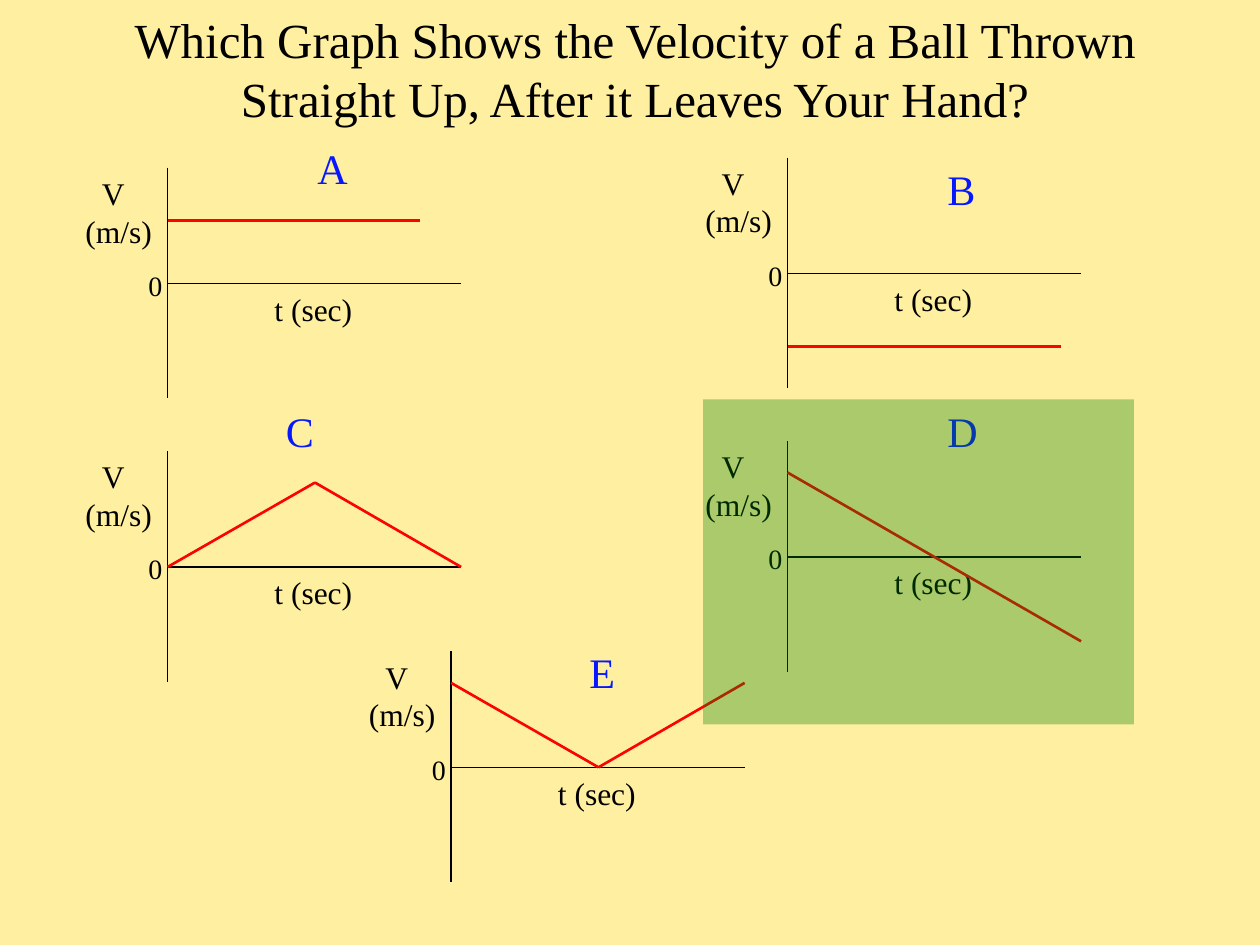
"""Build a quiz slide with five velocity graphs and the answer marked."""
from itertools import pairwise

from lxml.etree import SubElement as Sub
from pptx import Presentation
from pptx.dml.color import RGBColor
from pptx.enum.shapes import MSO_CONNECTOR as Link, MSO_SHAPE as Shape
from pptx.enum.text import MSO_ANCHOR as Anchor, PP_ALIGN as Align
from pptx.oxml.ns import qn
from pptx.util import Inches, Pt

BLACK = RGBColor(0, 0, 0)
RED = RGBColor(0xFA, 0x03, 0x03)
BLUE = RGBColor(0x07, 0x18, 0xFF)
GREEN = RGBColor(0, 0x80, 0)
CREAM = RGBColor(0xFF, 0xEF, 0xA1)
FONT = "Times New Roman"

TITLE = "Which Graph Shows the Velocity of a Ball Thrown Straight Up, After it Leaves Your Hand?"
HIGH, WIDE = 1.83, 2.33
MID, HALF = 0.92, 1.17
RISE = 0.67

GRAPHS = [
    {"name": "A", "at": (0.58, 1.33), "tag": (2.42, 1.08), "trace": [(0, 0.5), (2, 0.5)]},
    {"name": "B", "at": (5.5, 1.25), "tag": (7.42, 1.25), "trace": [(0, -0.58), (2.17, -0.58)]},
    {"name": "C", "at": (0.58, 3.58), "tag": (2.17, 3.17), "trace": [(0, 0), (HALF, RISE), (WIDE, 0)]},
    {"name": "D", "at": (5.5, 3.5), "tag": (7.42, 3.17), "trace": [(0, RISE), (WIDE, -RISE)]},
    {"name": "E", "at": (2.83, 5.17), "tag": (4.58, 5.08), "trace": [(0, RISE), (HALF, 0), (WIDE, RISE)]},
]
ANSWER = (5.58, 3.17, 3.42, 2.58)


def write(shapes, box, lines, size, color=BLACK, wrap=False, align=Align.LEFT, anchor=Anchor.TOP):
    frame = shapes.add_textbox(*map(Inches, box)).text_frame
    frame.text = "\n".join(lines)
    for key, value in {"word_wrap": wrap, "vertical_anchor": anchor}.items():
        setattr(frame, key, value)
    for para in frame.paragraphs:
        para.alignment = align
        font = para.runs[0].font
        for key, value in {"name": FONT, "size": Pt(size)}.items():
            setattr(font, key, value)
        font.color.rgb = color
    return frame


def draw(shapes, start, end, color, width):
    line = shapes.add_connector(Link.STRAIGHT, *map(Inches, (*start, *end)))
    line.line.color.rgb = color
    line.line.width = Pt(width)
    Sub(line._element.spPr, qn("a:effectLst"))


def plot(shapes, graph):
    left, top = graph["at"]
    x, zero = left + 0.75, top + MID
    part = shapes.add_group_shape().shapes
    draw(part, (x, top), (x, top + HIGH), BLACK, 0.75)
    draw(part, (x, zero), (x + WIDE, zero), BLACK, 0.75)
    unit = write(part, (left, top, 0.83, 0.7), ["V", "(m/s)"], 18, wrap=True)
    unit.paragraphs[0]._p.get_or_add_pPr().set("marL", str(Inches(0.13)))
    write(part, (left + 1.5, zero, 0.82, 0.4), ["t (sec)"], 18)
    write(part, (left + 0.5, top + 0.75, 0.31, 0.37), ["0"], 16)
    spots = [(x + t, zero - v) for t, v in graph["trace"]]
    for start, end in pairwise(spots):
        draw(part, start, end, RED, 1.5)
    write(shapes, (*graph["tag"], 0.44, 0.5), [graph["name"]], 24, BLUE)


def mark(shapes, box):
    rect = shapes.add_shape(Shape.RECTANGLE, *map(Inches, box))
    rect.shadow.inherit = False
    rect.fill.solid()
    rect.fill.fore_color.rgb = GREEN
    rect.line.fill.background()
    tint = rect._element.spPr.find(qn("a:solidFill"))[0]
    Sub(tint, qn("a:alpha"), val="33000")


def main():
    deck = Presentation()
    deck.slide_width, deck.slide_height = Inches(10), Inches(7.5)
    slide = deck.slides.add_slide(deck.slide_layouts[6])
    back = slide.background.fill
    back.solid()
    back.fore_color.rgb = CREAM
    shapes = slide.shapes
    write(shapes, (0.58, 0.17, 8.92, 0.75), [TITLE], 28, wrap=True, align=Align.CENTER, anchor=Anchor.MIDDLE)
    for graph in GRAPHS:
        plot(shapes, graph)
    mark(shapes, ANSWER)
    deck.save("out.pptx")


if __name__ == "__main__":
    main()
